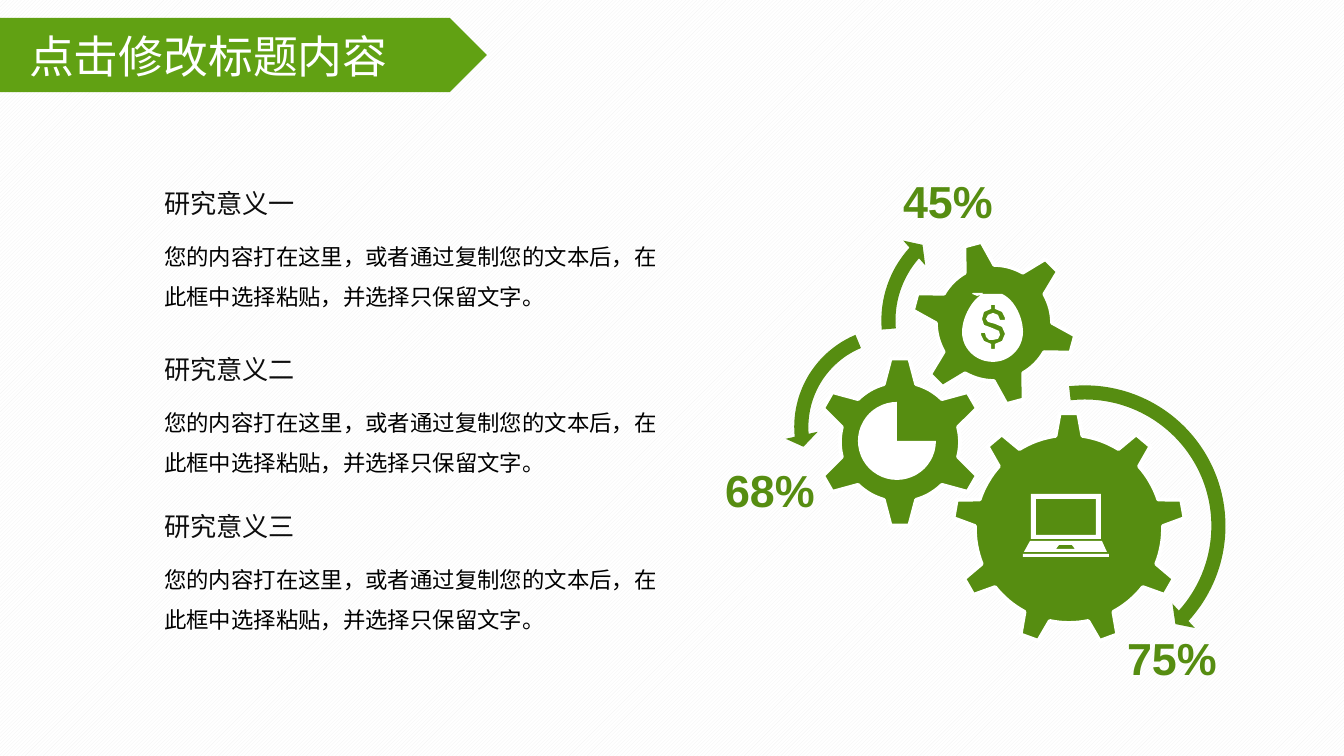
from math import cos, sin, radians
from pptx import Presentation
from pptx.dml.color import RGBColor
from pptx.enum.dml import MSO_PATTERN as Pat
from pptx.enum.shapes import MSO_SHAPE as Kind
from pptx.enum.text import MSO_AUTO_SIZE as Auto
from pptx.oxml.ns import qn
from pptx.util import Pt
from lxml.etree import SubElement

SCALE = 914400 / 134.4  # EMU in one px
GREEN, BAR, WHITE = "568D11", "61A113", "FFFFFF"
CJK = "Noto Sans CJK SC"
HEAD = {"size": Pt(14), "name": CJK}
BODY = {"size": Pt(12), "name": CJK}
TITLE = {"size": Pt(24), "name": CJK}
RATE = {"size": Pt(24), "name": "Arial", "bold": True}
NOTE = "您的内容打在这里，或者通过复制您的文本后，在此框中选择粘贴，并选择只保留文字。"


def px(*nums):
    return [round(n * SCALE) for n in nums]


def color(code):
    return RGBColor.from_string(code)


def paint(shape, fill, edge=None):
    shape.shadow.inherit = False
    shape.fill.solid()
    shape.fill.fore_color.rgb = color(fill)
    if edge:
        shape.line.color.rgb = color(edge)
        shape.line.width = Pt(2)
    else:
        shape.line.fill.background()


def preset(shapes, kind, box, fill, adjust=()):
    shape = shapes.add_shape(kind, *px(*box))
    for i, value in enumerate(adjust):
        shape.adjustments[i] = value
    paint(shape, fill)


def outline(shapes, x, y, loops, fill, edge=None):
    """Closed loops of points, measured from (x, y); inner loops are holes."""
    loops = [[px(x + a, y + b) for a, b in loop] for loop in loops]
    pen = shapes.build_freeform(*loops[0][0])
    for i, loop in enumerate(loops):
        if i:
            pen.move_to(*loop[0])
        pen.add_line_segments(loop[1:], close=True)
    paint(pen.convert_to_shape(), fill, edge)


def label(shapes, box, text, form, code, wrap=True, space=None, inset=None):
    frame = shapes.add_textbox(*px(*box)).text_frame
    frame.word_wrap = wrap
    frame.auto_size = Auto.SHAPE_TO_FIT_TEXT
    if inset:
        frame.margin_left = frame.margin_right = px(inset[0])[0]
        frame.margin_top = frame.margin_bottom = px(inset[1])[0]
    para = frame.paragraphs[0]
    if space:
        para.line_spacing = space
    run = para.add_run()
    run.text = text
    for key, value in form.items():
        setattr(run.font, key, value)
    run.font.color.rgb = color(code)
    SubElement(run.font._element, qn("a:ea")).set("typeface", form["name"])


def bend(a, b, c, d, steps=12):
    """Points of a cubic curve after its start a."""
    for i in range(1, steps + 1):
        t = i / steps
        u = 1 - t
        yield tuple(u**3 * p + 3 * u * u * t * q + 3 * u * t * t * r + t**3 * s
                    for p, q, r, s in zip(a, b, c, d))


# Title bar
def banner(shapes, x, y, text):
    preset(shapes, Kind.PENTAGON, (x, y, 525, 74), BAR)
    label(shapes, (x + 54, y + 4, 558, 67), text, TITLE, WHITE)


# Heading with a note below
def item(shapes, x, y, head):
    label(shapes, (x, y + 42, 524, 90), NOTE, BODY, "000000", space=1.5)
    label(shapes, (x, y, 159, 46), head, HEAD, "0D0D0D", wrap=False)


# Gear around a centre: teeth from root radius to tip radius
def gear(shapes, x, y, teeth, tip, root, top, base, turn=0):
    def spot(radius, angle):
        a = radians(angle)
        return radius * sin(a), -radius * cos(a)

    step = 360 / teeth
    points = []
    for i in range(teeth):
        mid = turn + i * step
        points += [spot(tip, mid - top), spot(tip, mid + top)]
        gap = step - 2 * base
        points += [spot(root, mid + base + gap * k / 8) for k in range(9)]
    outline(shapes, x, y, [points], GREEN, WHITE)


def laptop(shapes, x, y):
    def rect(a, b, c, d):
        return [(a, b), (c, b), (c, d), (a, d)]

    outline(shapes, x, y, [
        rect(8, 0, 78, 45), rect(13, 5, 73, 41),
        [(7, 47), (79, 47), (84, 58), (1, 58)],
        [(36, 51), (49, 51), (52, 55), (33, 55)],
        rect(0, 60, 86, 63)], WHITE)


def purse(shapes, x, y):
    left, foot, right, neck = (0, 39), (31, 69), (61, 39), (40, 1)
    bag = [neck, (20, 1), (21, 0), (11, 0), (10, 1), (15, 3), (19, 2),
           *bend((19, 2), (8, 9), (0, 27), left),
           *bend(left, (0, 56), (14, 69), foot),
           *bend(foot, (47, 69), (61, 56), right),
           *bend(right, (61, 25), (53, 7), neck)]
    sign = [(40, 48), (33, 51), (33, 56), (29, 56), (29, 51), (22, 48),
            (19, 42), (19, 40), (23, 40), (24, 44), (27, 47), (31, 47),
            (36, 46), (38, 42), (37, 38), (30, 35), (22, 32), (20, 26),
            (22, 19), (29, 16), (29, 12), (33, 12), (33, 16), (40, 19),
            (43, 25), (43, 27), (38, 27), (36, 22), (31, 20), (26, 22),
            (24, 26), (26, 29), (33, 31), (40, 34), (43, 41)]
    outline(shapes, x, y, [bag, sign], WHITE)


# Three gears with turning arrows and rates
def gears(slide, x, y):
    shapes = slide.shapes
    turns = [
        (Kind.CIRCULAR_ARROW, 219, 207, 300, (0.047, 2.99, 25.393, 158.123, 0.055)),
        (Kind.LEFT_CIRCULAR_ARROW, 69, 149, 218, (0.065, 4.3, 104.891, 148.378, 0.075)),
        (Kind.CIRCULAR_ARROW, 156, 34, 235, (0.06, 3.941, 133.138, 105.082, 0.07)),
    ]
    for kind, a, b, size, adjust in turns:
        preset(shapes, kind, (x + a, y + b, size, size), GREEN, adjust)

    group = shapes.add_group_shape().shapes
    gear(group, x + 353, y + 360, 9, 116, 94, 4.6, 8.2)
    gear(group, x + 184, y + 273, 6, 84, 60, 6.4, 15.6)
    gear(group, x + 278, y + 154, 6, 82, 58, 6.2, 15.2, -15)
    laptop(group, x + 307, y + 325)
    preset(group, Kind.PIE, (x + 142, y + 233, 78, 78), WHITE)
    purse(group, x + 246, y + 124)

    for text, a, b in [("45%", 178, 0), ("68%", 0, 289), ("75%", 402, 457)]:
        label(shapes, (x + a, y + b, 110, 65), text, RATE, GREEN,
              wrap=False, inset=(9, 5))


def main():
    deck = Presentation()
    deck.slide_width, deck.slide_height = px(1344, 756)
    slide = deck.slides.add_slide(deck.slide_layouts[6])

    # Hatched background
    fill = slide.background.fill
    fill.patterned()
    fill.pattern = Pat.LIGHT_UPWARD_DIAGONAL
    fill.fore_color.rgb = color("F2F2F2")
    fill.back_color.rgb = color(WHITE)

    for head, y in [("研究意义一", 181), ("研究意义二", 347), ("研究意义三", 504)]:
        item(slide.shapes.add_group_shape().shapes, 151, y, head)
    gears(slide, 716, 169)
    banner(slide.shapes.add_group_shape().shapes, -38, 18, "点击修改标题内容")
    deck.save("out.pptx")


if __name__ == "__main__":
    main()
